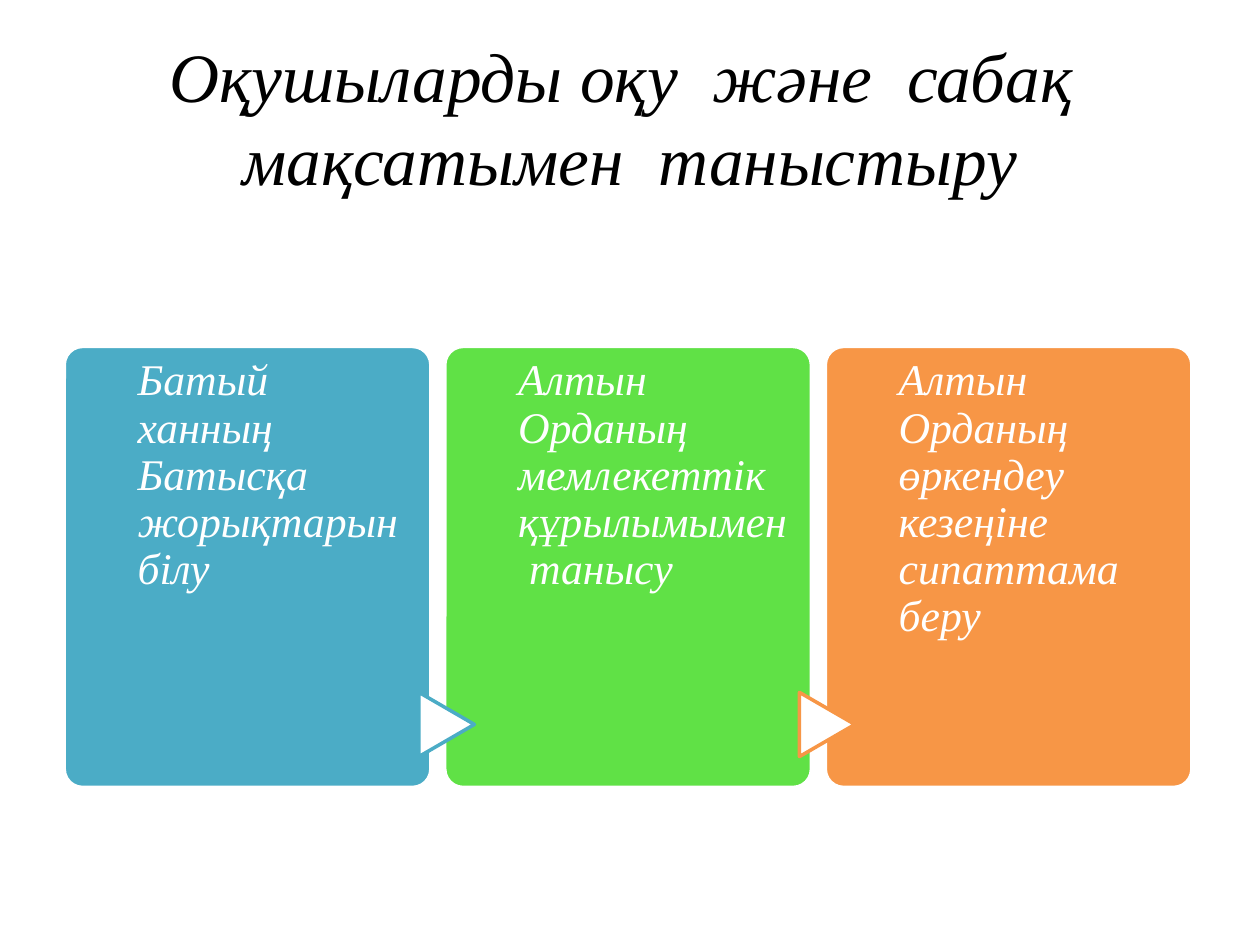
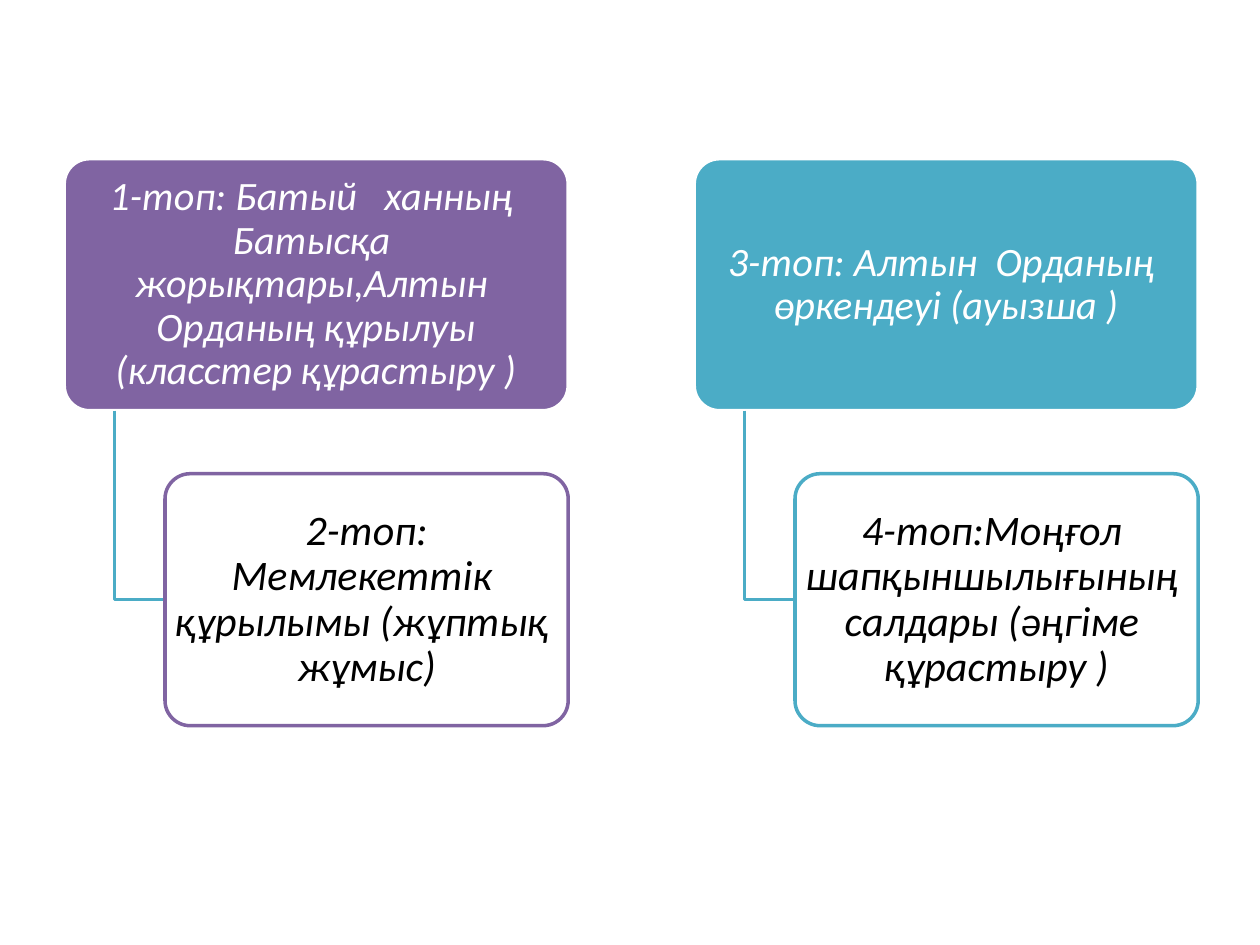
from dataclasses import dataclass

from lxml.etree import SubElement
from pptx import Presentation
from pptx.dml.color import RGBColor
from pptx.enum.shapes import MSO_SHAPE
from pptx.enum.text import MSO_ANCHOR, MSO_AUTO_SIZE, PP_ALIGN
from pptx.oxml.ns import qn
from pptx.util import Inches, Pt


@dataclass(frozen=True)
class Theme:
    white: RGBColor = RGBColor.from_string("FFFFFF")
    black: RGBColor = RGBColor.from_string("000000")
    teal: RGBColor = RGBColor.from_string("4BACC6")
    green: RGBColor = RGBColor.from_string("60E146")
    orange: RGBColor = RGBColor.from_string("F79646")
    purple: RGBColor = RGBColor.from_string("8064A2")
    serif: str = "Times New Roman"
    sans: str = "Calibri"
    title: Pt = Pt(39.6)
    goal: Pt = Pt(25)
    group: Pt = Pt(23)
    subgroup: Pt = Pt(24)
    line: Pt = Pt(2)


T = Theme()


def add_box(s, kind, box, fill, line):
    sp = s.shapes.add_shape(kind, *map(Inches, box))
    sp.shadow.inherit = False
    sp.fill.solid()
    sp.fill.fore_color.rgb = fill
    sp.line.color.rgb = line
    sp.line.width = T.line
    return sp


def write(sp, text, font, size, color, align, anchor, spacing=0.9, insets=None):
    """Fill a shape with one italic paragraph; insets are left, top, right, bottom."""
    tf = sp.text_frame
    frame = {"word_wrap": True, "auto_size": MSO_AUTO_SIZE.NONE, "vertical_anchor": anchor}
    if insets:
        sides = ("margin_left", "margin_top", "margin_right", "margin_bottom")
        frame.update(zip(sides, map(Inches, insets)))
    for name, value in frame.items():
        setattr(tf, name, value)
    p = tf.paragraphs[0]
    p.alignment = align
    p.line_spacing = spacing
    r = p.add_run()
    r.text = text
    for name, value in {"name": font, "size": size, "italic": True}.items():
        setattr(r.font, name, value)
    r.font.color.rgb = color


prs = Presentation()
prs.slide_width, prs.slide_height = Inches(10), Inches(7.5)

# Slide 1: lesson goals in three linked cards
s = prs.slides.add_slide(prs.slide_layouts[5])
title = s.shapes.title
title.left, title.top, title.width, title.height = map(Inches, (0.5, 0.3, 9, 1.25))
write(title, "Оқушыларды оқу  және  сабақ  мақсатымен  таныстыру", T.serif, T.title,
      T.black, PP_ALIGN.CENTER, MSO_ANCHOR.MIDDLE, spacing=1.0)

goals = [
    ("Батый  ханның  Батысқа  жорықтарын  білу", T.teal, None),
    ("Алтын  Орданың  мемлекеттік  құрылымымен  танысу", T.green, T.teal),
    ("Алтын  Орданың   өркендеу  кезеңіне  сипаттама  беру", T.orange, T.orange),
]
for i, (text, fill, arrow_color) in enumerate(goals):
    left = 0.51 + 3.02 * i
    card = add_box(s, MSO_SHAPE.ROUNDED_RECTANGLE, (left, 2.75, 2.91, 3.5), fill, T.white)
    card.adjustments[0] = 0.05
    write(card, text, T.serif, T.goal, T.white, PP_ALIGN.LEFT, MSO_ANCHOR.TOP,
          insets=(0.54, 0.05, 0.12, 0))
    if arrow_color:
        arrow = add_box(s, MSO_SHAPE.FLOWCHART_EXTRACT, (left - 0.24, 5.53, 0.51, 0.44),
                        T.white, arrow_color)
        arrow.rotation = 90

# Slide 2: two columns, each a group with a second group hanging from it
s = prs.slides.add_slide(prs.slide_layouts[6])
columns = [
    ("1-топ: Батый   ханның  Батысқа  жорықтары,Алтын  Орданың құрылуы (класстер құрастыру )",
     "2-топ: Мемлекеттік  құрылымы (жұптық  жұмыс)", T.purple),
    ("3-топ: Алтын  Орданың  өркендеуі (ауызша )",
     "4-топ:Моңғол  шапқыншылығының  салдары (әңгіме  құрастыру )", T.teal),
]
for i, (parent_text, child_text, color) in enumerate(columns):
    left = 0.51 + 5 * i
    parent = add_box(s, MSO_SHAPE.ROUNDED_RECTANGLE, (left, 1.26, 4, 2), color, T.white)

    builder = s.shapes.build_freeform(Inches(left + 0.4), Inches(3.26))
    builder.add_line_segments([(Inches(left + 0.4), Inches(4.76)),
                               (Inches(left + 0.8), Inches(4.76))], close=False)
    elbow = builder.convert_to_shape()
    elbow.shadow.inherit = False
    elbow.fill.background()
    elbow.line.color.rgb = T.teal
    elbow.line.width = T.line

    child = add_box(s, MSO_SHAPE.ROUNDED_RECTANGLE, (left + 0.8, 3.76, 3.2, 2), T.white, color)
    white_fill = child.fill._xPr.find(qn("a:solidFill"))[0]
    SubElement(white_fill, qn("a:alpha"), val="90000")

    for box, text, size, ink in ((parent, parent_text, T.group, T.white),
                                 (child, child_text, T.subgroup, T.black)):
        box.adjustments[0] = 0.1
        write(box, text, T.sans, size, ink, PP_ALIGN.CENTER, MSO_ANCHOR.MIDDLE,
              insets=(0, 0, 0, 0))

prs.save("out.pptx")
